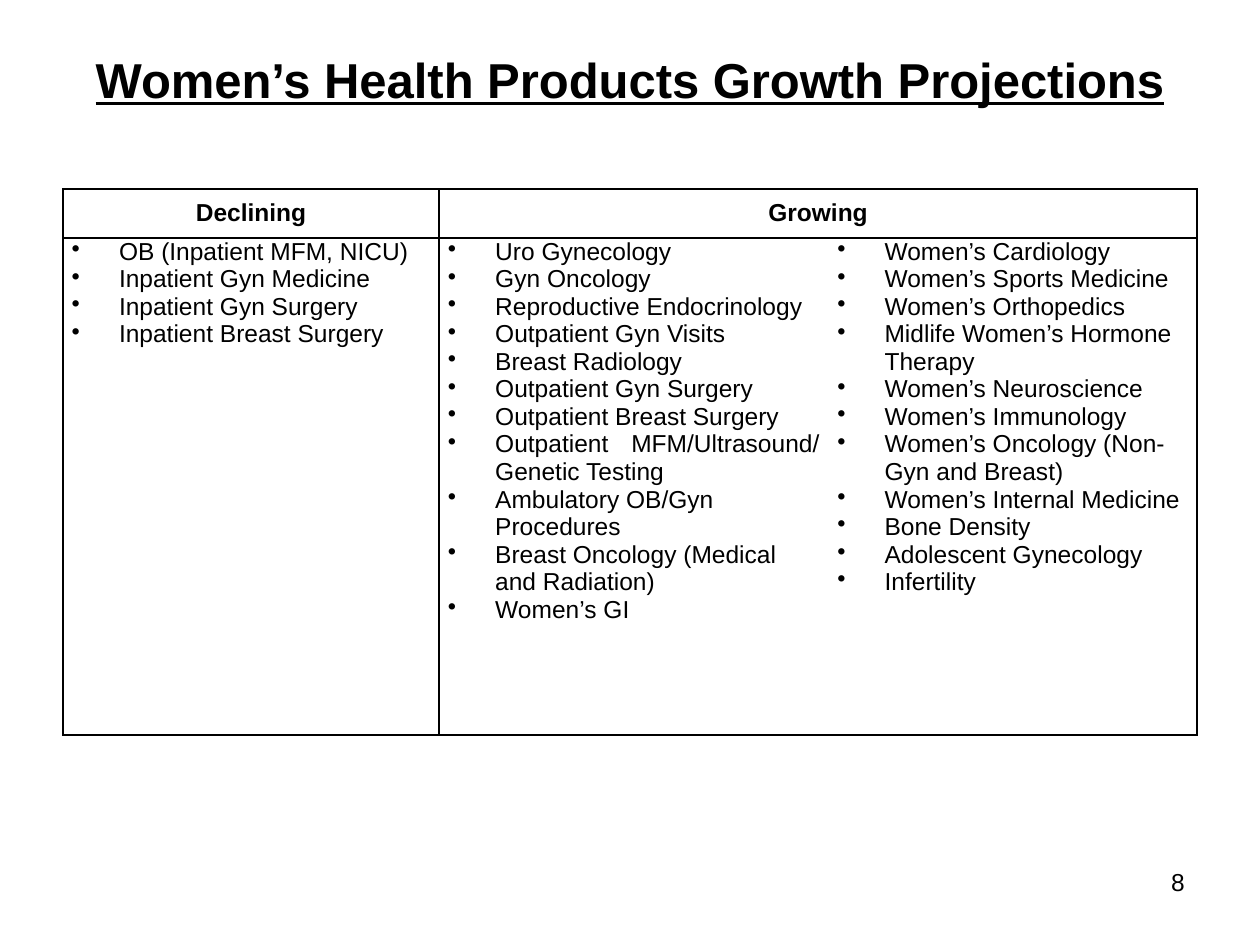
import pptx
import pptx.dml.color
import pptx.enum.text
import pptx.oxml
import pptx.oxml.ns
import pptx.util

Pt = pptx.util.Pt
ALIGN = pptx.enum.text.PP_ALIGN
ANCHOR = pptx.enum.text.MSO_ANCHOR
BLACK = "000000"
WHITE = "FFFFFF"

DECLINING = [
    "OB (Inpatient MFM, NICU)",
    "Inpatient Gyn Medicine",
    "Inpatient Gyn Surgery",
    "Inpatient Breast Surgery",
]
GROWING_LEFT = [
    "Uro Gynecology",
    "Gyn Oncology",
    "Reproductive Endocrinology",
    "Outpatient Gyn Visits",
    "Breast Radiology",
    "Outpatient Gyn Surgery",
    "Outpatient Breast Surgery",
    "Outpatient MFM/Ultrasound/ Genetic Testing",
    "Ambulatory OB/Gyn Procedures",
    "Breast Oncology (Medical and Radiation)",
    "Women’s GI",
]
GROWING_RIGHT = [
    "Women’s Cardiology",
    "Women’s Sports Medicine",
    "Women’s Orthopedics",
    "Midlife Women’s Hormone Therapy",
    "Women’s Neuroscience",
    "Women’s Immunology",
    "Women’s Oncology (Non-Gyn and Breast)",
    "Women’s Internal Medicine",
    "Bone Density",
    "Adolescent Gynecology",
    "Infertility",
]
JUSTIFIED = {"Outpatient MFM/Ultrasound/ Genetic Testing", "Women’s GI"}


def color(value):
    return pptx.dml.color.RGBColor.from_string(value)


def add_run(p, text, size=14, bold=False, underline=False):
    r = p.add_run()
    r.text = text
    r.font.name = "Arial"
    r.font.size = Pt(size)
    r.font.bold = bold
    r.font.underline = underline
    r.font.color.rgb = color(BLACK)


def add_text(s, box, text, align, anchor=ANCHOR.TOP, **style):
    tf = s.shapes.add_textbox(*map(Pt, box)).text_frame
    tf.word_wrap = True
    tf.vertical_anchor = anchor
    p = tf.paragraphs[0]
    p.alignment = align
    add_run(p, text, **style)


def add_bullet(p, indent=27):
    pPr = p._p.get_or_add_pPr()
    pPr.set("marL", str(Pt(indent)))
    pPr.set("indent", str(-Pt(indent)))
    pPr.append(pptx.oxml.parse_xml(
        f'<a:buChar {pptx.oxml.ns.nsdecls("a")} char="•"/>'))


def style_cell(cell, hidden_side):
    """Draw every border but the hidden side, then set fill and margins."""
    tcPr = cell._tc.get_or_add_tcPr()
    for side in "LRTB":
        paint = "<a:noFill/>" if side == hidden_side else (
            f'<a:solidFill><a:srgbClr val="{BLACK}"/></a:solidFill>')
        tcPr.append(pptx.oxml.parse_xml(
            f'<a:ln{side} {pptx.oxml.ns.nsdecls("a")} w="{Pt(1)}">'
            f'{paint}</a:ln{side}>'))
    cell.fill.solid()
    cell.fill.fore_color.rgb = color(WHITE)
    cell.margin_left = cell.margin_right = Pt(5)
    cell.margin_top = cell.margin_bottom = 0


def fill_heading(cell, text):
    cell.vertical_anchor = ANCHOR.MIDDLE
    p = cell.text_frame.paragraphs[0]
    p.alignment = ALIGN.CENTER
    add_run(p, text, bold=True)


def fill_list(cell, items):
    tf = cell.text_frame
    for i, item in enumerate(items):
        p = tf.add_paragraph() if i else tf.paragraphs[0]
        p.alignment = ALIGN.JUSTIFY if item in JUSTIFIED else ALIGN.LEFT
        add_bullet(p)
        add_run(p, item)


def add_projections(s):
    widths, heights = [215, 222.5, 210.5], [28, 284]
    table = s.shapes.add_table(2, 3, Pt(36), Pt(108),
                               Pt(sum(widths)), Pt(sum(heights))).table
    table.first_row = table.horz_banding = False
    for column, width in zip(table.columns, widths):
        column.width = Pt(width)
    for row, height in zip(table.rows, heights):
        row.height = Pt(height)

    table.cell(0, 1).merge(table.cell(0, 2))
    for row in range(2):
        for col, hidden_side in enumerate([None, "R", "L"]):
            cell = table.cell(row, col)
            style_cell(cell, None if cell.is_merge_origin else hidden_side)

    for col, heading in enumerate(["Declining", "Growing"]):
        fill_heading(table.cell(0, col), heading)
    for col, items in enumerate([DECLINING, GROWING_LEFT, GROWING_RIGHT]):
        fill_list(table.cell(1, col), items)


def main():
    prs = pptx.Presentation()
    prs.slide_width, prs.slide_height = Pt(720), Pt(540)
    s = prs.slides.add_slide(prs.slide_layouts[6])
    add_text(s, (36, 0, 648, 90), "Women’s Health Products Growth Projections",
             ALIGN.CENTER, ANCHOR.MIDDLE, size=28, bold=True, underline=True)
    add_projections(s)
    add_text(s, (516, 492, 168, 37.5), "8", ALIGN.RIGHT)
    prs.save("out.pptx")


if __name__ == "__main__":
    main()
